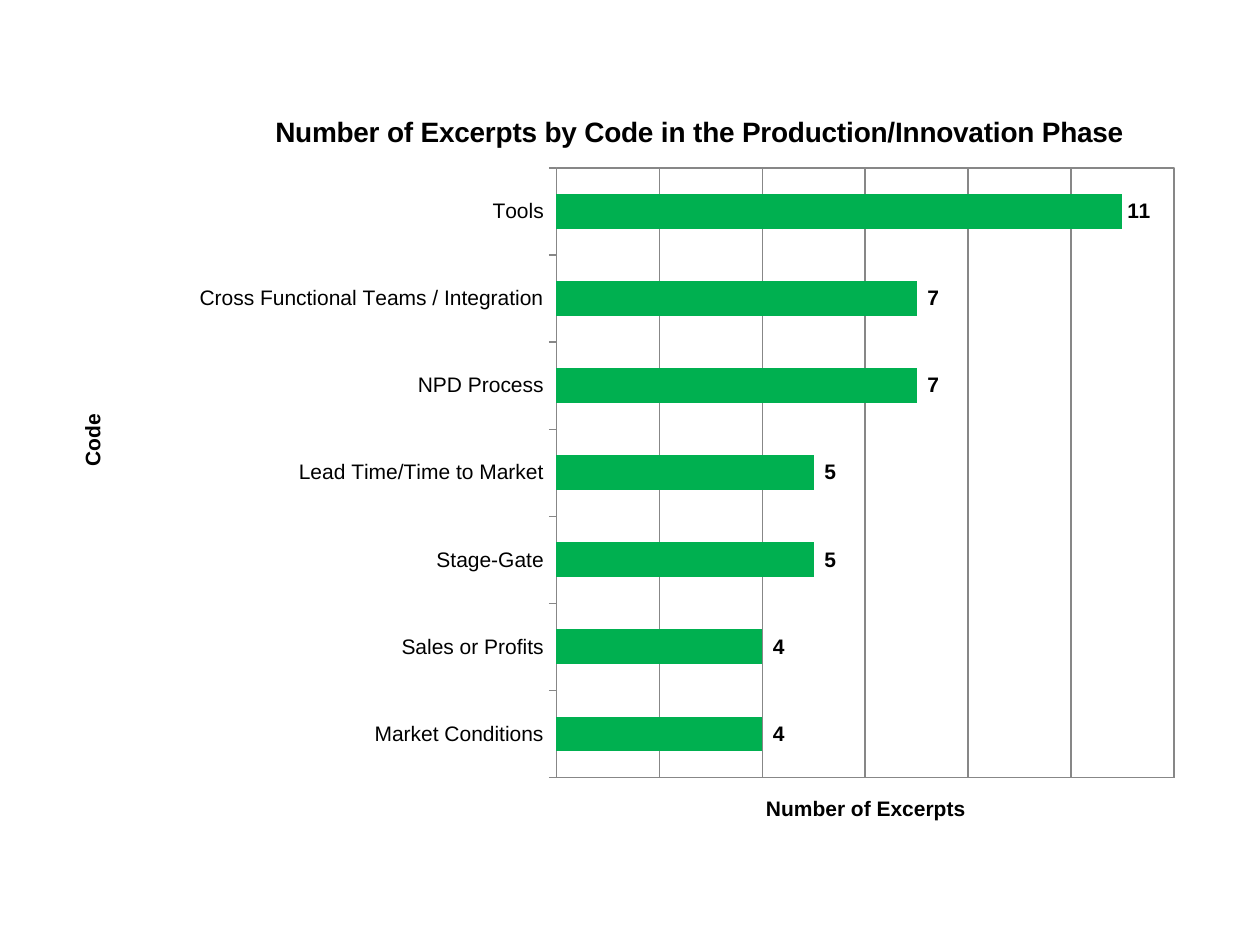
from lxml.etree import SubElement
from pptx import Presentation
from pptx.chart.data import CategoryChartData
from pptx.dml.color import RGBColor
from pptx.enum.chart import XL_CHART_TYPE as ChartType, XL_LABEL_POSITION as LabelPosition
from pptx.enum.chart import XL_TICK_LABEL_POSITION as TickLabels, XL_TICK_MARK as TickMark
from pptx.oxml import parse_xml
from pptx.oxml.ns import nsdecls, qn
from pptx.util import Inches, Pt

GREEN, GREY, BLACK = "00B050", "878787", "000000"
COUNT_FORMAT = '_(* #,##0_);_(* \\(#,##0\\);_(* "-"??_);_('
excerpts = {
    "Tools": 11,
    "Cross Functional Teams / Integration": 7,
    "NPD Process": 7,
    "Lead Time/Time to Market": 5,
    "Stage-Gate": 5,
    "Sales or Profits": 4,
    "Market Conditions": 4,
}


def style_font(font, size, bold=False):
    font.name, font.size, font.bold = "Arial", Pt(size), bold
    font.color.rgb = RGBColor.from_string(BLACK)


def set_layout(parent, index, **settings):
    """Place a chart part by hand, in shares of the chart's size."""
    for old in parent.findall(qn("c:layout")):
        parent.remove(old)
    layout = parse_xml(f"<c:layout {nsdecls('c')}><c:manualLayout/></c:layout>")
    for name, value in settings.items():
        SubElement(layout[0], qn(f"c:{name}")).set("val", str(value))
    parent.insert(index, layout)


deck = Presentation()
deck.slide_width, deck.slide_height = Inches(10), Inches(7.5)
page = deck.slides.add_slide(deck.slide_layouts[6])

data = CategoryChartData()
data.categories = list(excerpts)
data.add_series("Series 1", list(excerpts.values()))
chart = page.shapes.add_chart(
    ChartType.BAR_CLUSTERED, Inches(0.42), Inches(0.75), Inches(9.08), Inches(5.83), data
).chart
style_font(chart.font, 10)
chart.has_legend = False

# Axes
codes, counts = chart.category_axis, chart.value_axis
codes.reverse_order = True
codes.major_tick_mark = TickMark.OUTSIDE
codes.tick_label_position = TickLabels.NEXT_TO_AXIS
style_font(codes.tick_labels.font, 12)
counts.visible = False
counts.minimum_scale, counts.maximum_scale, counts.major_unit = 0, 12, 2
counts.has_major_gridlines = True
for line in (codes.format.line, counts.major_gridlines.format.line):
    line.color.rgb = RGBColor.from_string(GREY)
    line.width = Pt(0.75)

# Titles
titles = [
    (chart, "Number of Excerpts by Code in the Production/Innovation Phase", 16, 0.19, 0.02),
    (codes, "Code", 12, 0.02, 0.43),
    (counts, "Number of Excerpts", 12, 0.62, 0.95),
]
for owner, text, size, x, y in titles:
    owner.has_title = True
    title = owner.chart_title if owner is chart else owner.axis_title
    title.text_frame.text = text
    style_font(title.text_frame.paragraphs[0].runs[0].font, size, bold=True)
    set_layout(title._element, 1, xMode="edge", yMode="edge", x=x, y=y)

# Bars and their labels
plot = chart.plots[0]
plot.gap_width = 150
plot.vary_by_categories = False
series = plot.series[0]
series.format.fill.solid()
series.format.fill.fore_color.rgb = RGBColor.from_string(GREEN)
labels = series.data_labels
labels.show_value = True
labels.position = LabelPosition.OUTSIDE_END
labels.number_format, labels.number_format_is_linked = COUNT_FORMAT, False
style_font(labels.font, 12, bold=True)
first_label = series.points[0].data_label
style_font(first_label.font, 12, bold=True)
first_label.position = LabelPosition.OUTSIDE_END
general = f'<c:numFmt {nsdecls("c")} formatCode="General" sourceLinked="0"/>'
labels._element.find(qn("c:dLbl")).insert(1, parse_xml(general))

# Plot area
area = chart._chartSpace.chart.plotArea
set_layout(area, 0, layoutTarget="inner", xMode="edge", yMode="edge",
           x=0.44, y=0.1, w=0.54, h=0.83)
area.append(parse_xml(
    f'<c:spPr {nsdecls("c", "a")}><a:noFill/><a:ln w="9525"><a:solidFill>'
    f'<a:srgbClr val="{GREY}"/></a:solidFill></a:ln></c:spPr>'
))

deck.save("out.pptx")
